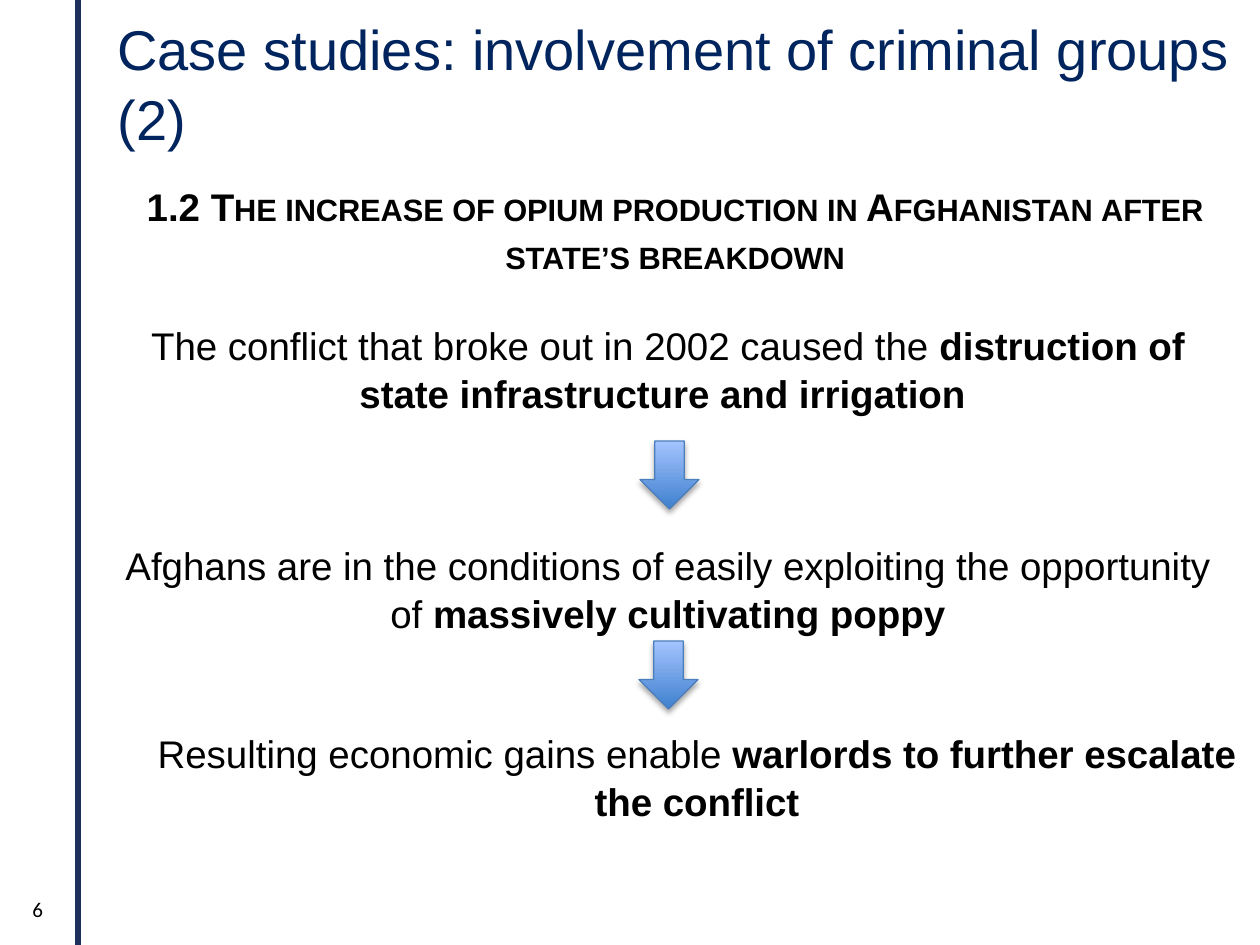
from dataclasses import dataclass

from lxml import etree
from pptx import Presentation
from pptx import util as u
from pptx.dml.color import RGBColor
from pptx.enum import shapes, text
from pptx.oxml.ns import qn

# Content: runs are (words, style); each box is (left, top, width, height) in px
TITLE = [("Case studies: involvement of criminal groups (2)", "")]
HEADING = [
    ("1.2 ", "bold"),
    ("The increase of opium production in Afghanistan after state’s breakdown", "bold small"),
]
STEPS = [
    ((93, 314), [
        ("The conflict that broke out in 2002 caused the ", ""),
        ("distruction of state infrastructure and irrigation ", "bold"),
    ]),
    ((93, 534), [
        ("Afghans are in the conditions of easily exploiting the opportunity of ", ""),
        ("massively cultivating poppy", "bold"),
    ]),
    ((122, 722), [
        ("Resulting economic gains enable ", ""),
        ("warlords to further escalate the conflict", "bold"),
    ]),
]
PAGE_NUMBER = [("6", "")]

TITLE_BOX = (105, 6, 1140, 73)
HEADING_BOX = (105, 175, 1140, 78)
STEP_SIZE = (1150, 68)
ARROW_SPOTS = [(640, 441), (639, 641)]
ARROW_SIZE = (59, 68)
BAR_BOX = (75, 0, 6, 945)
NUMBER_BOX = (20, 890, 57, 50)


@dataclass(frozen=True)
class Theme:
    font: str = "Arial"
    number_font: str = "Calibri"
    title_size: int = 32
    body_size: int = 22
    number_size: int = 12
    line_spacing: float = 1.04
    title: str = "00245D"
    body: str = "000000"
    bar: str = "1C305B"
    arrow_low: str = "3F80CE"
    arrow_high: str = "A4C4FF"
    arrow_line: str = "4B7EBC"


THEME = Theme()
EMU_PER_PX = 914400 / 126


def px(*lengths):
    return [u.Emu(round(length * EMU_PER_PX)) for length in lengths]


def rgb(color):
    return RGBColor.from_string(color)


def add_text(slide, box, runs, size=THEME.body_size, color=THEME.body,
             font=THEME.font, align=text.PP_ALIGN.CENTER, spacing=THEME.line_spacing):
    frame = slide.shapes.add_textbox(*px(*box)).text_frame
    frame.word_wrap = True
    paragraph = frame.paragraphs[0]
    paragraph.alignment = align
    paragraph.line_spacing = spacing
    for words, style in runs:
        run = paragraph.add_run()
        run.text = words
        run.font.name = font
        run.font.size = u.Pt(size)
        run.font.color.rgb = rgb(color)
        run.font.bold = "bold" in style
        if "small" in style:
            run.font._element.set("cap", "small")


def add_bar(slide):
    bar = slide.shapes.add_shape(shapes.MSO_SHAPE.RECTANGLE, *px(*BAR_BOX))
    bar.shadow.inherit = False
    bar.fill.solid()
    bar.fill.fore_color.rgb = rgb(THEME.bar)
    bar.line.fill.background()


def add_arrow(slide, spot):
    arrow = slide.shapes.add_shape(shapes.MSO_SHAPE.DOWN_ARROW, *px(*spot, *ARROW_SIZE))
    arrow.fill.gradient()
    arrow.fill.gradient_angle = 90
    for stop, color in zip(arrow.fill.gradient_stops, (THEME.arrow_low, THEME.arrow_high)):
        stop.color.rgb = rgb(color)
    arrow.line.color.rgb = rgb(THEME.arrow_line)
    arrow.line.width = u.Pt(0.75)

    # Soft shadow straight below
    arrow.shadow.inherit = False
    effects = arrow._element.spPr.find(qn("a:effectLst"))
    shadow = etree.SubElement(effects, qn("a:outerShdw"), blurRad=str(u.Pt(3.1)),
                              dist=str(u.Pt(1.8)), dir="5400000", rotWithShape="0")
    tone = etree.SubElement(shadow, qn("a:srgbClr"), val="000000")
    etree.SubElement(tone, qn("a:alpha"), val="35000")


def main():
    deck = Presentation()
    deck.slide_width, deck.slide_height = px(1260, 945)
    slide = deck.slides.add_slide(deck.slide_layouts[6])

    # Frame: side bar and page number
    add_bar(slide)
    add_text(slide, NUMBER_BOX, PAGE_NUMBER, size=THEME.number_size,
             font=THEME.number_font, align=text.PP_ALIGN.LEFT, spacing=1.0)

    # Title and heading
    add_text(slide, TITLE_BOX, TITLE, size=THEME.title_size,
             color=THEME.title, align=text.PP_ALIGN.LEFT)
    add_text(slide, HEADING_BOX, HEADING)

    # Chain of events
    for spot, runs in STEPS:
        add_text(slide, (*spot, *STEP_SIZE), runs)
    for spot in ARROW_SPOTS:
        add_arrow(slide, spot)

    deck.save("out.pptx")


if __name__ == "__main__":
    main()
